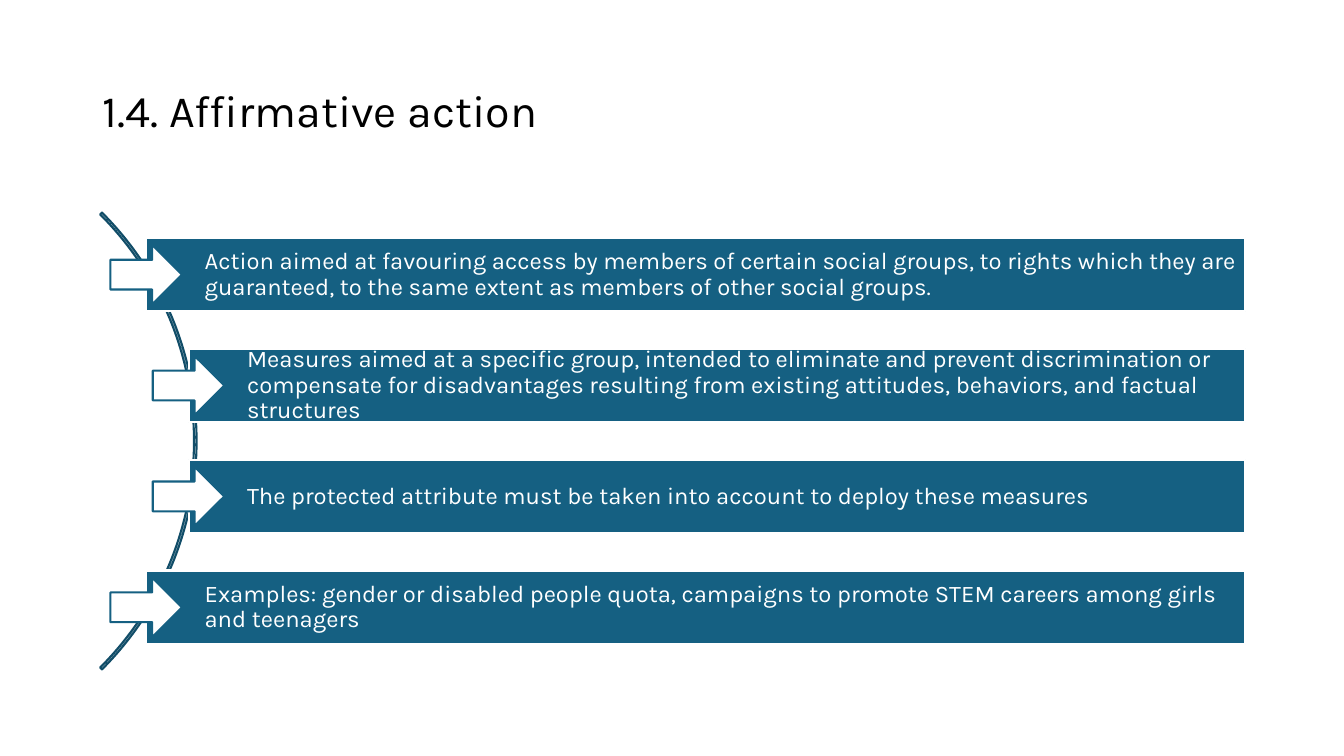
from pptx import Presentation
from pptx import util as u
from pptx.dml.color import RGBColor
from pptx.enum import shapes, text

TEAL = RGBColor(0x15, 0x60, 0x82)
DARK_TEAL = RGBColor(0x11, 0x4D, 0x68)
WHITE = RGBColor(0xFF, 0xFF, 0xFF)
BLACK = RGBColor(0, 0, 0)

# Each statement with its indent from the outermost bar
STATEMENTS = [
    ("Action aimed at favouring access by members of certain social groups, to rights "
     "which they are guaranteed, to the same extent as members of other social groups.", 0),
    ("Measures aimed at a specific group, intended to eliminate and prevent discrimination "
     "or compensate for disadvantages resulting from existing attitudes, behaviors, and "
     "factual structures", 0.42),
    ("The protected attribute must be taken into account to deploy these measures", 0.42),
    ("Examples: gender or disabled people quota, campaigns to promote STEM careers among "
     "girls and teenagers", 0),
]
BAR_LEFT, BAR_RIGHT, BAR_TOP = 1.45, 12.35, 2.36
BAR_HEIGHT, BAR_PITCH = 0.73, 1.1
ARROW_WIDTH, ARROW_HEIGHT = 0.71, 0.59


class SlideBuilder:
    font_name = "Karla"
    line_width = u.Pt(1.5)

    def __init__(self, slide):
        self.slide = slide

    def format_text(self, frame, wording, size, color):
        frame.text = wording
        frame.word_wrap = True
        frame.vertical_anchor = text.MSO_ANCHOR.MIDDLE
        paragraph = frame.paragraphs[0]
        paragraph.alignment = text.PP_ALIGN.LEFT
        paragraph.line_spacing = 0.9
        paragraph.font.name = self.font_name
        paragraph.font.size = u.Pt(size)
        paragraph.font.color.rgb = color

    def title(self, wording):
        title = self.slide.shapes.title
        title.left, title.top = u.Inches(0.92), u.Inches(0.4)
        title.width, title.height = u.Inches(11.5), u.Inches(1.45)
        self.format_text(title.text_frame, wording, 32, BLACK)

    def shape(self, kind, left, top, width, height, fill, line):
        shape = self.slide.shapes.add_shape(
            kind, u.Inches(left), u.Inches(top), u.Inches(width), u.Inches(height))
        shape.shadow.inherit = False
        if fill is None:
            shape.fill.background()
        else:
            shape.fill.solid()
            shape.fill.fore_color.rgb = fill
        shape.line.color.rgb = line
        shape.line.width = self.line_width
        return shape

    def arc(self, left, top, size):
        arc = self.shape(shapes.MSO_SHAPE.BLOCK_ARC, left, top, size, size, None, DARK_TEAL)
        # Start angle, end angle and thickness
        for index, value in enumerate((189, 27, 0.004)):
            arc.adjustments[index] = value

    def bar(self, left, top, wording):
        bar = self.shape(shapes.MSO_SHAPE.RECTANGLE, left, top,
                         BAR_RIGHT - left, BAR_HEIGHT, TEAL, WHITE)
        frame = bar.text_frame
        frame.margin_left = u.Inches(0.58)
        frame.margin_top = frame.margin_right = frame.margin_bottom = u.Inches(0.05)
        self.format_text(frame, wording, 17, WHITE)

    def arrow(self, left, top):
        self.shape(shapes.MSO_SHAPE.RIGHT_ARROW, left, top,
                   ARROW_WIDTH, ARROW_HEIGHT, WHITE, TEAL)


def main():
    deck = Presentation()
    deck.slide_width, deck.slide_height = u.Inches(13.33), u.Inches(7.5)
    builder = SlideBuilder(deck.slides.add_slide(deck.slide_layouts[5]))

    # Heading
    builder.title("1.4. Affirmative action")

    # Curve behind the statements
    builder.arc(-4.46, 1.17, 6.41)

    # Statement bars, each with an arrow centred on its left edge
    for row, (statement, indent) in enumerate(STATEMENTS):
        left, top = BAR_LEFT + indent, BAR_TOP + row * BAR_PITCH
        builder.bar(left, top, statement)
        builder.arrow(left - ARROW_WIDTH / 2, top + (BAR_HEIGHT - ARROW_HEIGHT) / 2)

    deck.save("out.pptx")


if __name__ == "__main__":
    main()
